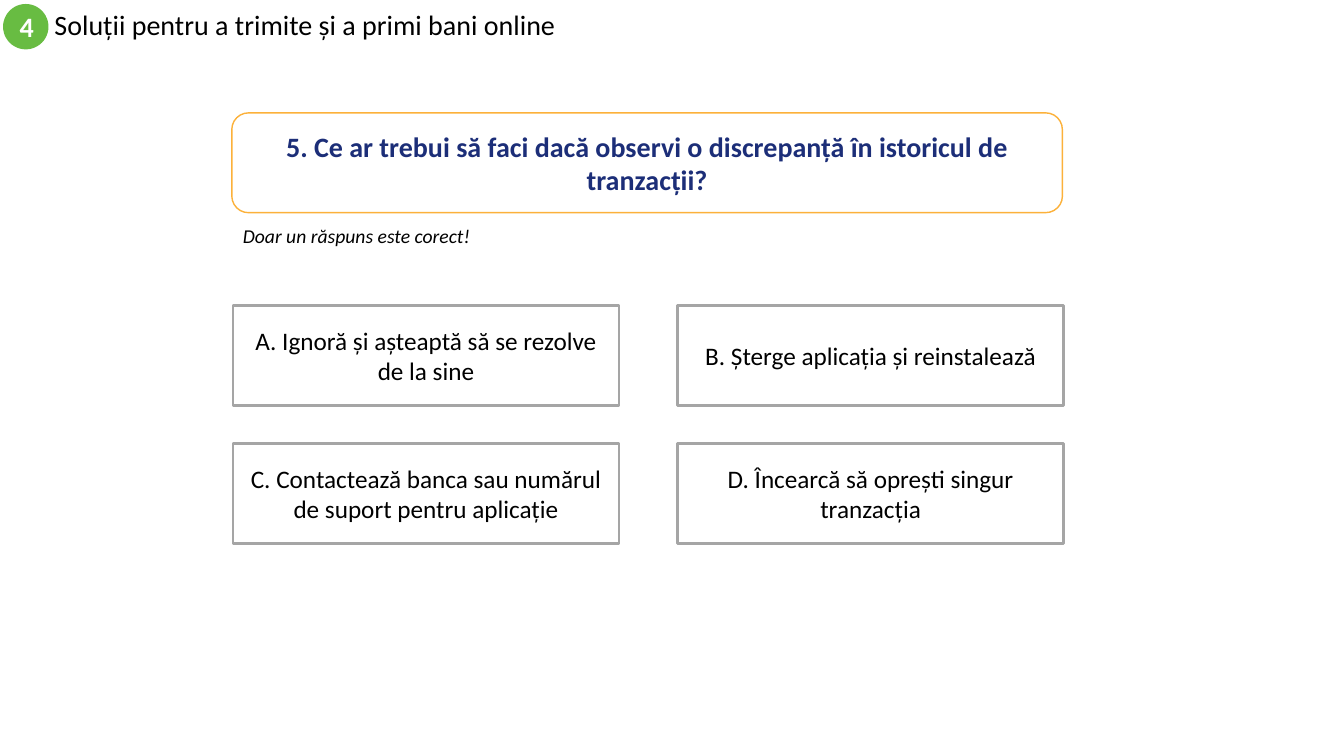
from pptx import Presentation
from pptx.dml.color import RGBColor
from pptx.enum.shapes import MSO_SHAPE
from pptx.enum.text import MSO_ANCHOR, MSO_AUTO_SIZE, PP_ALIGN
from pptx.util import Inches, Pt

GREEN = RGBColor(0x68, 0xBC, 0x42)
ORANGE = RGBColor(0xFC, 0xB1, 0x3A)
NAVY = RGBColor(0x1C, 0x2E, 0x78)
GRAY = RGBColor(0xA5, 0xA5, 0xA5)
BLACK = RGBColor(0x00, 0x00, 0x00)
WHITE = RGBColor(0xFF, 0xFF, 0xFF)

ELLIPSE = MSO_SHAPE.OVAL
RECTANGLE = MSO_SHAPE.RECTANGLE
ROUNDED = MSO_SHAPE.ROUNDED_RECTANGLE
LEFT, CENTER = PP_ALIGN.LEFT, PP_ALIGN.CENTER
TOP, MIDDLE = MSO_ANCHOR.TOP, MSO_ANCHOR.MIDDLE
NO_FIT = MSO_AUTO_SIZE.NONE

TITLE_ONLY = 5
ANSWERS_PER_ROW = 2
# Areas are (left, top, width, height) in percent of the slide's size.
FIRST_ANSWER = (17.33, 40.4, 28.73, 13.2)
ANSWER_STEP_X, ANSWER_STEP_Y = 33.08, 18.27

ANSWERS = [
    "A. Ignoră și așteaptă să se rezolve de la sine",
    "B. Șterge aplicația și reinstalează",
    "C. Contactează banca sau numărul de suport pentru aplicație",
    "D. Încearcă să oprești singur tranzacția",
]


class QuizSlide:
    font_name = "Calibri"

    def __init__(self, presentation):
        self.width = presentation.slide_width
        self.height = presentation.slide_height
        self.slide = presentation.slides.add_slide(
            presentation.slide_layouts[TITLE_ONLY])

    def place(self, area):
        """Turn an area in percent of the slide into lengths."""
        sides = (self.width, self.height) * 2
        return [round(side * share / 100) for side, share in zip(sides, area)]

    def set_text(self, shape, text, size, color=BLACK, align=CENTER,
                 anchor=MIDDLE, bold=False, italic=False):
        frame = shape.text_frame
        frame.text = text
        frame.word_wrap = True
        frame.auto_size = NO_FIT
        frame.vertical_anchor = anchor
        paragraph = frame.paragraphs[0]
        paragraph.alignment = align
        font = paragraph.runs[0].font
        font.name = self.font_name
        font.size = Pt(size)
        font.color.rgb = color
        font.bold = bold
        font.italic = italic

    def title(self, text, area):
        title = self.slide.shapes.title
        title.left, title.top, title.width, title.height = self.place(area)
        self.set_text(title, text, 20, align=LEFT)
        title.text_frame.paragraphs[0].line_spacing = 0.9

    def note(self, text, area):
        box = self.slide.shapes.add_textbox(*self.place(area))
        self.set_text(box, text, 14, align=LEFT, anchor=TOP, italic=True)

    def panel(self, kind, text, area, size, fill=WHITE, line=None,
              line_width=1, **style):
        shape = self.slide.shapes.add_shape(kind, *self.place(area))
        shape.shadow.inherit = False
        shape.fill.solid()
        shape.fill.fore_color.rgb = fill
        if line is None:
            shape.line.fill.background()
        else:
            shape.line.color.rgb = line
            shape.line.width = Pt(line_width)
        self.set_text(shape, text, size, **style)

    def answers(self, texts):
        left, top, width, height = FIRST_ANSWER
        for index, text in enumerate(texts):
            row, column = divmod(index, ANSWERS_PER_ROW)
            area = (left + column * ANSWER_STEP_X, top + row * ANSWER_STEP_Y,
                    width, height)
            self.panel(RECTANGLE, text, area, 18, line=GRAY, line_width=2)


def main():
    presentation = Presentation()
    presentation.slide_width = Inches(13.33)
    presentation.slide_height = Inches(7.5)

    quiz = QuizSlide(presentation)
    quiz.panel(ELLIPSE, "4", (0.23, 0.53, 3.38, 6), 20, fill=GREEN,
               color=WHITE, bold=True)
    quiz.title("Soluții pentru a trimite și a primi bani online",
               (3.3, 0.53, 60, 6))
    quiz.panel(ROUNDED, "5. Ce ar trebui să faci dacă observi o discrepanță "
               "în istoricul de tranzacții?", (17.25, 14.93, 61.8, 13.2), 20,
               line=ORANGE, color=NAVY, bold=True)
    quiz.note("Doar un răspuns este corect!", (17.33, 28.93, 23.4, 4.53))
    quiz.answers(ANSWERS)

    presentation.save("out.pptx")


if __name__ == "__main__":
    main()
